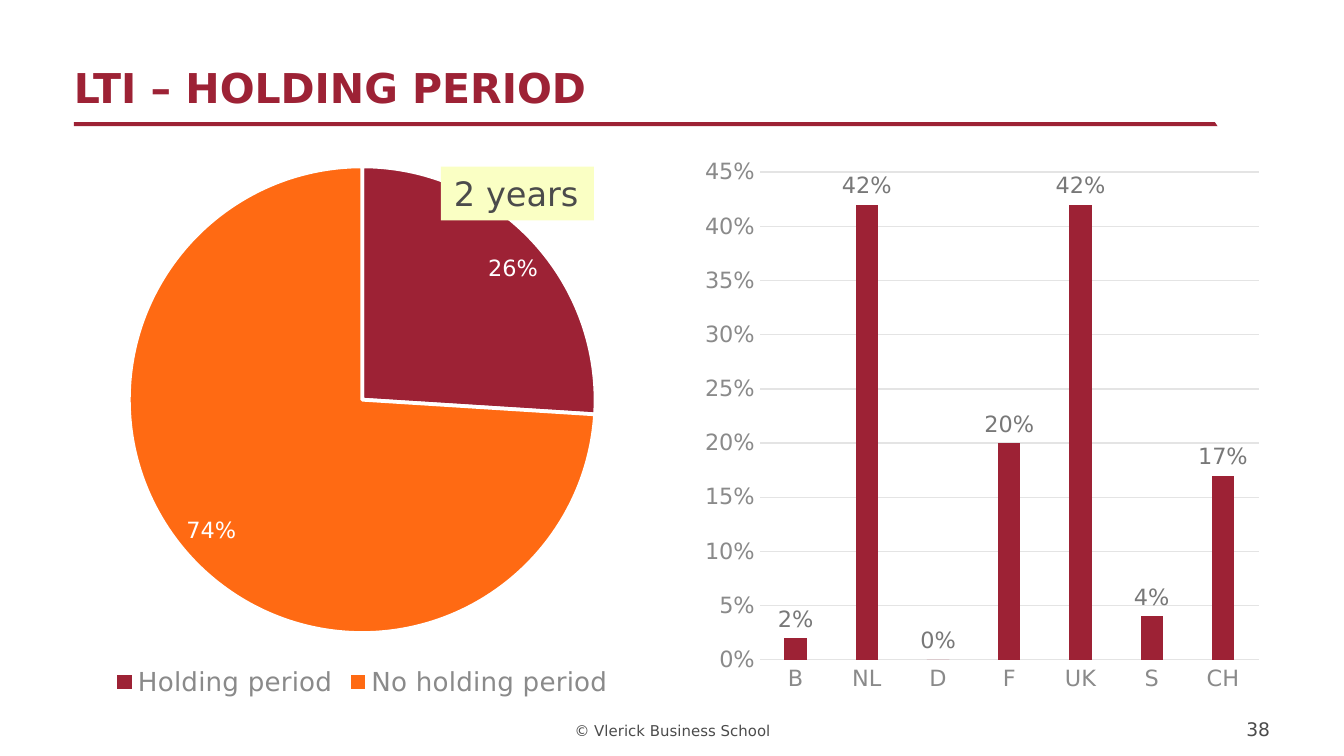
from dataclasses import dataclass

from pptx import Presentation
from pptx.chart.data import CategoryChartData
from pptx.dml.color import RGBColor
from pptx.enum.chart import XL_CHART_TYPE as ChartType
from pptx.enum.chart import XL_LABEL_POSITION as LabelPosition
from pptx.enum.chart import XL_LEGEND_POSITION as LegendPosition
from pptx.enum.chart import XL_TICK_MARK as TickMark
from pptx.enum.shapes import MSO_SHAPE as Shape
from pptx.enum.text import MSO_ANCHOR as Anchor
from pptx.enum.text import MSO_AUTO_SIZE as AutoSize
from pptx.enum.text import PP_ALIGN as Align
from pptx.util import Inches, Pt


@dataclass(frozen=True)
class Theme:
    font: str = "DejaVu Sans"
    red: str = "9D2235"
    orange: str = "FF6A13"
    yellow: str = "FAFFC4"
    white: str = "FFFFFF"
    text: str = "4B4B4B"
    axis_text: str = "8A8A8A"
    label_text: str = "787878"
    grid: str = "E4E4E4"
    title_size: int = 22
    callout_size: int = 18
    legend_size: int = 14
    chart_size: int = 12
    small_size: int = 10
    footer_size: int = 8


THEME = Theme()
LEFT, CHART_TOP = 0.55, 1.1
CHART_WIDTH, CHART_HEIGHT = 4.29, 4.13
RIGHT_CHART_LEFT = 5.16


def rgb(color):
    return RGBColor.from_string(color)


def box(left, top, width, height):
    return [Inches(length) for length in (left, top, width, height)]


def style_font(font, size, color, bold=False):
    font.name = THEME.font
    font.size = Pt(size)
    font.color.rgb = rgb(color)
    font.bold = bold


def style_fill(part, color):
    part.fill.solid()
    part.fill.fore_color.rgb = rgb(color)


def style_line(line, color, width):
    line.color.rgb = rgb(color)
    line.width = Pt(width)


def write(frame, wording, size, color, align=Align.LEFT, bold=False):
    paragraph = frame.paragraphs[0]
    paragraph.alignment = align
    run = paragraph.add_run()
    run.text = wording
    style_font(run.font, size, color, bold)


def set_bottom_frame(frame, bottom_inset=0):
    frame.word_wrap = True
    frame.auto_size = AutoSize.NONE
    frame.vertical_anchor = Anchor.BOTTOM
    frame.margin_left = frame.margin_right = frame.margin_top = 0
    frame.margin_bottom = Inches(bottom_inset)


def add_title(slide, wording):
    title = slide.shapes.title
    title.left, title.top, title.width, title.height = box(LEFT, 0, 8.27, 0.83)
    set_bottom_frame(title.text_frame)
    write(title.text_frame, wording, THEME.title_size, THEME.red, bold=True)


def add_title_rule(slide):
    builder = slide.shapes.build_freeform(Inches(LEFT), Inches(0.91))
    corners = [(9.04, 0.91), (9.06, 0.94), (LEFT, 0.94)]
    builder.add_line_segments([(Inches(x), Inches(y)) for x, y in corners])
    rule = builder.convert_to_shape()
    rule.shadow.inherit = False
    style_fill(rule, THEME.red)
    rule.line.fill.background()


def add_footer_text(slide, place, wording, size, align, bottom_inset=0):
    frame = slide.shapes.add_textbox(*box(*place)).text_frame
    set_bottom_frame(frame, bottom_inset)
    write(frame, wording, size, THEME.text, align)


def add_percent_chart(slide, chart_type, left, shares, label_color, label_position):
    data = CategoryChartData(number_format="0%")
    data.categories = shares.keys()
    data.add_series("Series 1", shares.values())
    place = box(left, CHART_TOP, CHART_WIDTH, CHART_HEIGHT)
    chart = slide.shapes.add_chart(chart_type, *place, data).chart
    chart.has_title = False
    chart.has_legend = False
    style_font(chart.font, THEME.small_size, THEME.text)
    labels = chart.series[0].data_labels
    labels.show_value = True
    labels.show_percentage = False
    labels.number_format = "0%"
    labels.number_format_is_linked = False
    labels.position = label_position
    style_font(labels.font, THEME.chart_size, label_color)
    return chart


def add_holding_pie(slide):
    shares = {"Holding period": 0.26, "No holding period": 0.74}
    chart = add_percent_chart(slide, ChartType.PIE, LEFT, shares,
                              THEME.white, LabelPosition.BEST_FIT)
    chart.plots[0].vary_by_categories = True
    for index, color in enumerate((THEME.red, THEME.orange)):
        slice_format = chart.series[0].points[index].format
        style_fill(slice_format, color)
        style_line(slice_format.line, THEME.white, 2)
    chart.has_legend = True
    chart.legend.position = LegendPosition.BOTTOM
    chart.legend.include_in_layout = False
    style_font(chart.legend.font, THEME.legend_size, THEME.axis_text)


def style_axis(axis):
    axis.major_tick_mark = axis.minor_tick_mark = TickMark.NONE
    style_font(axis.tick_labels.font, THEME.chart_size, THEME.axis_text)


def add_country_columns(slide):
    shares = {"B": 0.02, "NL": 0.42, "D": 0, "F": 0.2,
              "UK": 0.42, "S": 0.04, "CH": 0.17}
    chart = add_percent_chart(slide, ChartType.COLUMN_CLUSTERED, RIGHT_CHART_LEFT,
                              shares, THEME.label_text, LabelPosition.OUTSIDE_END)
    plot = chart.plots[0]
    plot.vary_by_categories = False
    plot.gap_width = 219
    plot.overlap = -27
    style_fill(chart.series[0].format, THEME.red)

    countries, percent = chart.category_axis, chart.value_axis
    style_axis(countries)
    style_axis(percent)
    style_line(countries.format.line, THEME.grid, 0.75)
    percent.minimum_scale, percent.maximum_scale = 0, 0.45
    percent.major_unit = 0.05
    percent.tick_labels.number_format = "0%"
    percent.tick_labels.number_format_is_linked = False
    percent.format.line.fill.background()
    percent.has_major_gridlines = True
    style_line(percent.major_gridlines.format.line, THEME.grid, 0.75)


def add_callout(slide, wording):
    callout = slide.shapes.add_shape(Shape.RECTANGLE, *box(3.28, 1.24, 1.14, 0.4))
    callout.shadow.inherit = False
    style_fill(callout, THEME.yellow)
    callout.line.fill.background()
    frame = callout.text_frame
    frame.word_wrap = False
    frame.auto_size = AutoSize.SHAPE_TO_FIT_TEXT
    frame.vertical_anchor = Anchor.TOP
    write(frame, wording, THEME.callout_size, THEME.text)


def main():
    deck = Presentation()
    deck.slide_width = Inches(10)
    deck.slide_height = deck.slide_width * 9 // 16
    slide = deck.slides.add_slide(deck.slide_layouts[5])
    add_footer_text(slide, (3.94, 5.35, 2.13, 0.16), "© Vlerick Business School",
                    THEME.footer_size, Align.CENTER, 0.01)
    add_title_rule(slide)
    add_title(slide, "LTI – HOLDING PERIOD")
    add_holding_pie(slide)
    add_country_columns(slide)
    add_callout(slide, "2 years")
    add_footer_text(slide, (8.9, 5.35, 0.55, 0.16), "38",
                    THEME.small_size, Align.RIGHT)
    deck.save("out.pptx")


if __name__ == "__main__":
    main()
